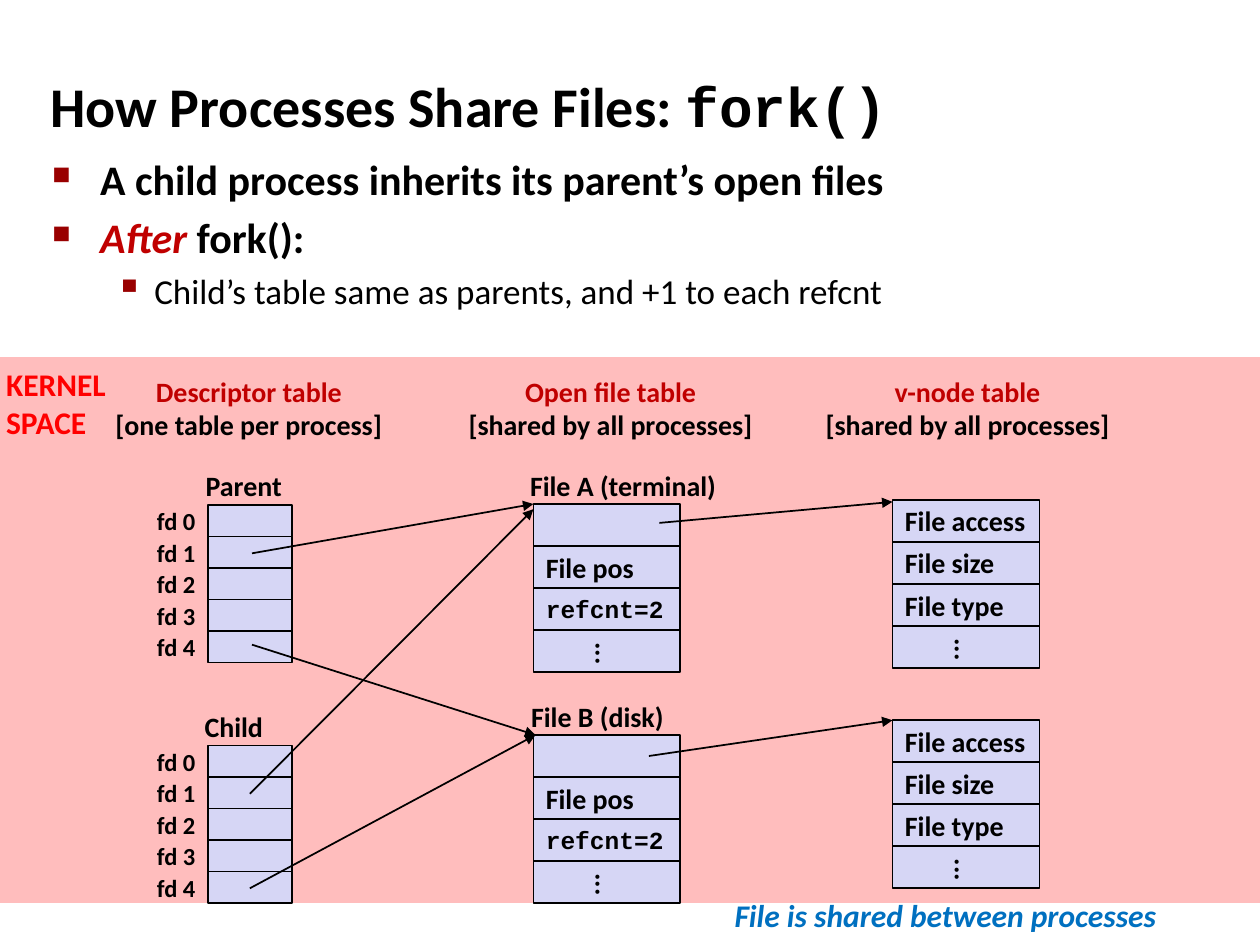
"""Build a slide on how processes share open files after fork()."""
from dataclasses import dataclass

import lxml.etree
import pptx
import pptx.dml.color
import pptx.enum.shapes
import pptx.enum.text
import pptx.oxml.ns
import pptx.util

Color = pptx.dml.color.RGBColor
Align = pptx.enum.text.PP_ALIGN
Anchor = pptx.enum.text.MSO_ANCHOR
qn = pptx.oxml.ns.qn

BLACK = Color(0x00, 0x00, 0x00)
RED = Color(0xFF, 0x00, 0x00)
BRICK = Color(0xC0, 0x00, 0x00)
MAROON = Color(0x99, 0x00, 0x00)
BLUE = Color(0x00, 0x70, 0xC0)
LILAC = Color(0xD6, 0xD6, 0xF5)

COLS, ROWS = 120, 90
UNIT = pptx.util.Inches(10) // COLS
DOTS = "..."


@dataclass(frozen=True)
class Face:
    size: int
    color: Color = BLACK
    name: str = "Calibri"
    bold: bool = True
    slant: bool = False


@dataclass(frozen=True)
class Run:
    text: str
    face: Face


@dataclass(frozen=True)
class Line:
    runs: tuple[Run, ...]
    align: Align = Align.LEFT


@dataclass(frozen=True)
class Box:
    left: float
    top: float
    width: float
    height: float


@dataclass(frozen=True)
class Bullet:
    mark: str
    share: int
    left: float
    hang: float


@dataclass(frozen=True)
class Stack:
    title: str
    head: Box
    cell: Box
    texts: tuple[str, ...]
    tags: tuple[str, ...] = ()


@dataclass(frozen=True)
class Arrow:
    start: tuple[float, float]
    end: tuple[float, float]


SMALL, BODY, LARGE = Face(14), Face(16), Face(24)
CODE = Face(14, name="Courier New")
SQUARE = Bullet("■", 60, 0.38, 0.38)
SUB = Bullet("▪", 110, 0.81, 0.31)

TITLE = Line((Run("How Processes Share Files: ", Face(32)),
              Run("fork()", Face(32, name="Courier New"))))
POINTS = (
    (Line((Run("A child process inherits its parent’s open files", LARGE),)), SQUARE),
    (Line((Run("After", Face(24, BRICK, slant=True)), Run(" fork():", LARGE))), SQUARE),
    (Line((Run("Child’s table same as parents, and +1 to each refcnt",
               Face(20, bold=False)),)), SUB),
)
HEADS = (
    ("Descriptor table", "[one table per process]", Box(9.6, 35, 28.2, 7.7)),
    ("Open file table", "[shared by all processes]", Box(43.2, 35, 29.9, 7.7)),
    ("v-node table", "[shared by all processes]", Box(77.2, 35, 29.9, 7.7)),
)
TAGS = tuple(f"fd {n}" for n in range(5))
SLOTS = ("",) * len(TAGS)
FILE = ("", "File pos", "refcnt=2", DOTS)
NODE = ("File access", "File size", "File type", DOTS)
STACKS = (
    Stack("Parent", Box(18.4, 44, 9.7, 4.4), Box(19.8, 48.1, 8, 3), SLOTS, TAGS),
    Stack("Child", Box(18.3, 67, 8, 4.4), Box(19.8, 71, 8, 3), SLOTS, TAGS),
    Stack("File A (terminal)", Box(49.3, 44, 20.3, 4.4), Box(50.8, 48, 14, 4), FILE),
    Stack("File B (disk)", Box(49.4, 66, 15.2, 4.4), Box(50.8, 70, 14, 4), FILE),
    Stack("", Box(0, 0, 0, 0), Box(85, 47.6, 14, 4), NODE),
    Stack("", Box(0, 0, 0, 0), Box(85, 68.6, 14, 4), NODE),
)
ARROWS = (
    Arrow((24, 52.7), (50.8, 48)), Arrow((24, 61.4), (51, 70)),
    Arrow((62.8, 49.8), (85, 47.8)), Arrow((61.8, 72), (85, 68.6)),
    Arrow((23.8, 75.6), (50.8, 48.5)), Arrow((23.8, 84.6), (51, 70)),
)


def span(*cells: float) -> list[int]:
    """Turn grid cells into slide lengths."""
    return [round(cell * UNIT) for cell in cells]


def place(box: Box) -> list[int]:
    """Give the slide lengths of a box."""
    return span(box.left, box.top, box.width, box.height)


def paint(font: pptx.text.text.Font, face: Face) -> None:
    """Apply a face to a font."""
    font.name, font.size = face.name, pptx.util.Pt(face.size)
    font.bold, font.italic = face.bold, face.slant
    font.color.rgb = face.color


def mark(para: pptx.text.text._Paragraph, bullet: Bullet, size: int) -> None:
    """Give a paragraph its bullet, indent and gap."""
    props = para._p.get_or_add_pPr()
    props.set("marL", str(pptx.util.Inches(bullet.left)))
    props.set("indent", str(-pptx.util.Inches(bullet.hang)))
    para.space_before = pptx.util.Pt(size * 0.2)
    tint = lxml.etree.SubElement(props, qn("a:buClr"))
    lxml.etree.SubElement(tint, qn("a:srgbClr"), val=str(MAROON))
    lxml.etree.SubElement(props, qn("a:buSzPct"), val=str(bullet.share * 1000))
    lxml.etree.SubElement(props, qn("a:buChar"), char=bullet.mark)


def write(frame: pptx.text.text.TextFrame, lines: tuple[Line, ...], wrap: bool = False,
          anchor: Anchor = Anchor.MIDDLE, bullets: tuple[Bullet, ...] = ()) -> None:
    """Fill a text frame with lines."""
    frame.word_wrap, frame.vertical_anchor = wrap, anchor
    for at, line in enumerate(lines):
        para = frame.add_paragraph() if at else frame.paragraphs[0]
        para.alignment = line.align
        if bullets:
            mark(para, bullets[at], line.runs[0].face.size)
        for part in line.runs:
            run = para.add_run()
            run.text = part.text
            paint(para.font if len(line.runs) == 1 else run.font, part.face)


def label(slide: pptx.slide.Slide, box: Box, *lines: Line, **style) -> None:
    """Add a text box."""
    write(slide.shapes.add_textbox(*place(box)).text_frame, lines, **style)


def block(slide: pptx.slide.Slide, box: Box, color: Color) -> pptx.shapes.autoshape.Shape:
    """Add a plain filled block."""
    shape = slide.shapes.add_shape(pptx.enum.shapes.MSO_SHAPE.RECTANGLE, *place(box))
    shape.shadow.inherit = False
    shape.fill.solid()
    shape.fill.fore_color.rgb = color
    shape.line.fill.background()
    return shape


def pile(slide: pptx.slide.Slide, stack: Stack) -> None:
    """Draw a stack of cells with its title and row tags."""
    cell = stack.cell
    for row, text in enumerate(stack.texts):
        top = cell.top + row * cell.height
        shape = block(slide, Box(cell.left, top, cell.width, cell.height), LILAC)
        shape.line.color.rgb, shape.line.width = BLACK, pptx.util.Pt(1)
        if text:
            write(shape.text_frame, (Line((Run(text, CODE if "=" in text else BODY),)),))
        if text == DOTS:
            shape.text_frame._txBody.bodyPr.set("vert", "eaVert")
        if stack.tags:
            label(slide, Box(cell.left - cell.width, top, cell.width, cell.height),
                  Line((Run(stack.tags[row], SMALL),), Align.RIGHT))
    if stack.title:
        label(slide, stack.head, Line((Run(stack.title, BODY),)))


def point(slide: pptx.slide.Slide, arrow: Arrow) -> None:
    """Draw an arrow."""
    kind = pptx.enum.shapes.MSO_CONNECTOR.STRAIGHT
    link = slide.shapes.add_connector(kind, *span(*arrow.start, *arrow.end))
    link.line.color.rgb, link.line.width = BLACK, pptx.util.Pt(1)
    lxml.etree.SubElement(link.line._get_or_add_ln(), qn("a:tailEnd"), type="triangle")
    lxml.etree.SubElement(link._element.spPr, qn("a:effectLst"))


def main() -> None:
    """Build and save the deck."""
    deck = pptx.Presentation()
    deck.slide_width, deck.slide_height = span(COLS, ROWS)
    slide = deck.slides.add_slide(deck.slide_layouts[6])
    band = block(slide, Box(0, 34, COLS, 52), RED)
    tint = band.fill._xPr.find(".//" + qn("a:srgbClr"))
    lxml.etree.SubElement(tint, qn("a:alpha"), val="26000")
    label(slide, Box(3.6, 5, 99.6, 10), TITLE, wrap=True)
    lines, bullets = zip(*POINTS)
    label(slide, Box(3.8, 14, 109, 17), *lines, wrap=True, anchor=Anchor.TOP, bullets=bullets)
    for name, note, box in HEADS:
        label(slide, box, Line((Run(name, Face(16, BRICK)),), Align.CENTER),
              Line((Run(note, BODY),), Align.CENTER))
    for stack in STACKS:
        pile(slide, stack)
    for arrow in ARROWS:
        point(slide, arrow)
    label(slide, Box(-0.6, 34.2, 12.4, 8.5), Line((Run("KERNEL SPACE", Face(18, RED)),)),
          wrap=True, anchor=Anchor.TOP)
    label(slide, Box(68.5, 84.7, 43.1, 4.8),
          Line((Run("File is shared between processes", Face(18, BLUE, slant=True)),), Align.CENTER))
    deck.save("out.pptx")


if __name__ == "__main__":
    main()
